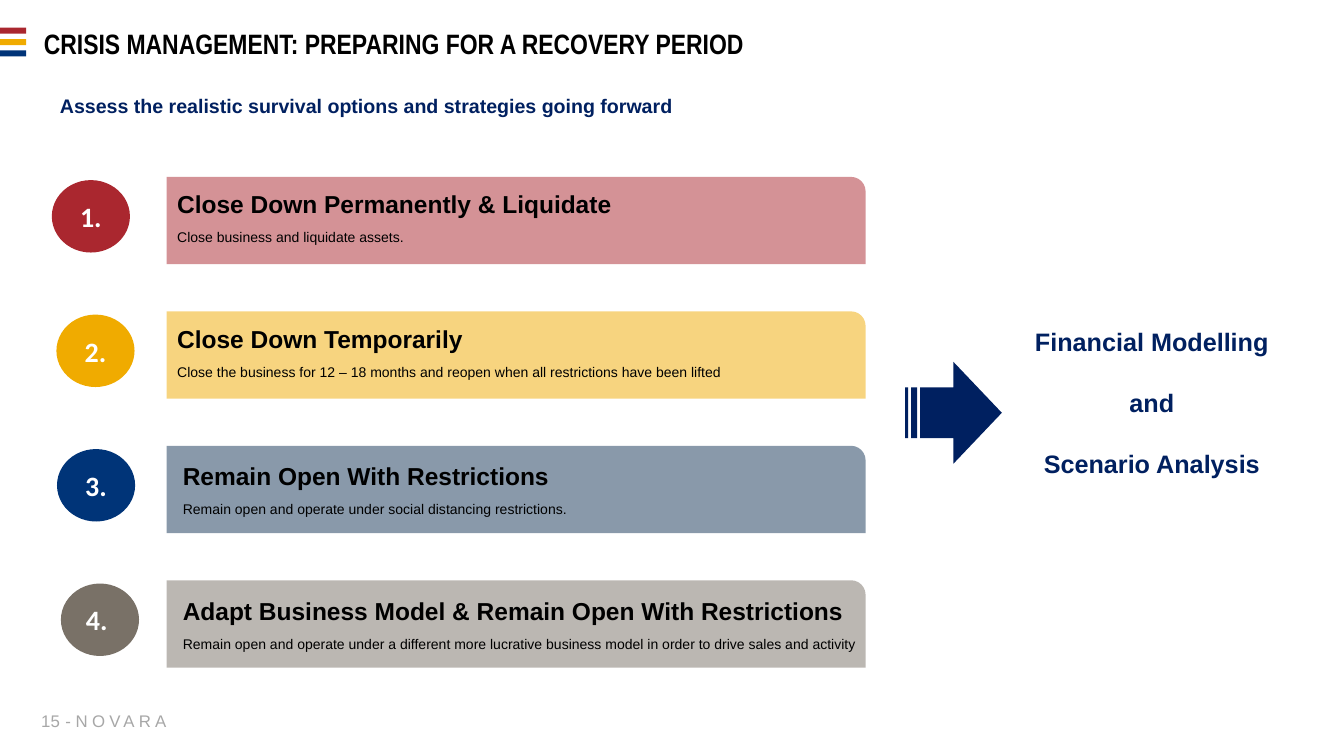
from lxml.etree import SubElement
from pptx import Presentation
from pptx.dml.color import RGBColor
from pptx.enum.shapes import MSO_SHAPE
from pptx.enum.text import MSO_ANCHOR, MSO_AUTO_SIZE, PP_ALIGN
from pptx.oxml.ns import qn
from pptx.util import Pt

THEME = {
    "red": "AA272F", "gold": "F0AB00", "blue": "003478", "slate": "143557",
    "taupe": "797167", "navy": "002060", "black": "000000",
    "white": "FFFFFF", "grey": "A7A7A7",
    "title": 40, "number": 40, "outcome": 36, "heading": 35,
    "subtitle": 28, "footer": 24, "detail": 20,
    "font": "Arial", "title_font": "Arial Narrow", "number_font": "Calibri",
}

TITLE = "CRISIS MANAGEMENT: PREPARING FOR A RECOVERY PERIOD"
SUBTITLE = "Assess the realistic survival options and strategies going forward"
OUTCOME = ["Financial Modelling", "and", "Scenario Analysis"]
PAGE, FIRM = "15", "NOVARA"
STRIPES = ["red", "gold", "blue"]

# number, heading, detail, circle colour, bar colour, circle left, text left, text drop
OPTIONS = [
    ("1.", "Close Down Permanently & Liquidate",
     "Close business and liquidate assets.", "red", "red", 74, 246, 14),
    ("2.", "Close Down Temporarily",
     "Close the business for 12 – 18 months and reopen when all restrictions have been lifted",
     "gold", "gold", 80.6, 246, 15),
    ("3.", "Remain Open With Restrictions",
     "Remain open and operate under social distancing restrictions.",
     "blue", "slate", 81.4, 254, 18.6),
    ("4. ", "Adapt Business Model & Remain Open With Restrictions",
     "Remain open and operate under a different more lucrative business model "
     "in order to drive sales and activity", "taupe", "taupe", 87, 254, 18.6),
]
ROW_TOP, ROW_PITCH = 252.7, 192.1
BAR_LEFT, BAR_W, BAR_H = 238, 998.6, 124.6
CIRCLE_W, CIRCLE_H, CIRCLE_DROP = 111.6, 103.5, 4.6


def style(p, size, color, bold=True, font="font", align=PP_ALIGN.LEFT):
    p.alignment = align
    for r in p.runs:
        r.font.name = THEME[font]
        r.font.size = Pt(THEME[size])
        r.font.bold = bold
        r.font.color.rgb = RGBColor.from_string(THEME[color])


def set_inset(tf, x, y):
    tf.margin_left = tf.margin_right = Pt(x)
    tf.margin_top = tf.margin_bottom = Pt(y)


def add_shape(s, kind, color, x, y, w, h, opacity=None):
    sp = s.shapes.add_shape(kind, Pt(x), Pt(y), Pt(w), Pt(h))
    sp.shadow.inherit = False
    sp.fill.solid()
    sp.fill.fore_color.rgb = RGBColor.from_string(THEME[color])
    sp.line.fill.background()
    if opacity:
        clr = sp.fill._xPr.find(".//" + qn("a:srgbClr"))
        SubElement(clr, qn("a:alpha")).set("val", str(opacity * 1000))
    return sp


def add_text(s, text, x, y, w, h, inset=(7.2, 7.2), wrap=True, anchor=MSO_ANCHOR.TOP):
    tf = s.shapes.add_textbox(Pt(x), Pt(y), Pt(w), Pt(h)).text_frame
    tf.word_wrap = wrap
    tf.vertical_anchor = anchor
    set_inset(tf, *inset)
    tf.text = text
    return tf


def add_option(s, top, option):
    number, heading, detail, circle, bar, circle_x, text_x, drop = option
    add_shape(s, MSO_SHAPE.ROUND_1_RECTANGLE, bar, BAR_LEFT, top, BAR_W, BAR_H, opacity=50)
    sp = add_shape(s, MSO_SHAPE.OVAL, circle, circle_x, top + CIRCLE_DROP, CIRCLE_W, CIRCLE_H)
    sp.text_frame.text = number
    sp.text_frame.vertical_anchor = MSO_ANCHOR.MIDDLE
    style(sp.text_frame.paragraphs[0], "number", "white",
          font="number_font", align=PP_ALIGN.CENTER)
    tf = add_text(s, f"{heading}\n{detail}", text_x, top + drop, 1009, 90, inset=(7.2, 3.6))
    first, second = tf.paragraphs
    style(first, "heading", "black")
    style(second, "detail", "black", bold=False)
    second.space_before = Pt(14)


def add_footer(s):
    tf = add_text(s, PAGE, 57, 1016, 28.6, 27.5, (0, 0), False, MSO_ANCHOR.MIDDLE)
    style(tf.paragraphs[0], "footer", "grey", bold=False, align=PP_ALIGN.RIGHT)
    tf = add_text(s, "- ", 86.4, 1008.7, 168, 42, wrap=False, anchor=MSO_ANCHOR.MIDDLE)
    p = tf.paragraphs[0]
    r = p.add_run()
    r.text = FIRM
    style(p, "footer", "grey", bold=False)
    r.font._element.set("spc", "600")


def main():
    prs = Presentation()
    prs.slide_width, prs.slide_height = Pt(1920), Pt(1080)
    s = prs.slides.add_slide(prs.slide_layouts[5])

    title = s.shapes.title
    title.left, title.top, title.width, title.height = Pt(55.4), Pt(18.7), Pt(1848), Pt(92)
    tf = title.text_frame
    tf.text = TITLE
    tf.auto_size = MSO_AUTO_SIZE.NONE
    tf.vertical_anchor = MSO_ANCHOR.MIDDLE
    set_inset(tf, 7.2, 7.2)
    tf.paragraphs[0].line_spacing = 0.9
    style(tf.paragraphs[0], "title", "black", font="title_font")

    for i, color in enumerate(STRIPES):
        add_shape(s, MSO_SHAPE.RECTANGLE, color, 0, 39.6 + 16.2 * i, 37.4, 8.6)

    tf = add_text(s, SUBTITLE, 78.5, 126.7, 1019.5, 48)
    style(tf.paragraphs[0], "subtitle", "navy")

    for i, option in enumerate(OPTIONS):
        add_option(s, ROW_TOP + ROW_PITCH * i, option)

    add_shape(s, MSO_SHAPE.STRIPED_RIGHT_ARROW, "navy", 1293, 517, 138.2, 145.4)
    tf = add_text(s, "\n".join(OUTCOME), 1309, 458.6, 673, 232.6)
    for i, p in enumerate(tf.paragraphs):
        style(p, "outcome", "navy", align=PP_ALIGN.CENTER)
        if i:
            p.space_before = Pt(44)

    add_footer(s)
    prs.save("out.pptx")


if __name__ == "__main__":
    main()
